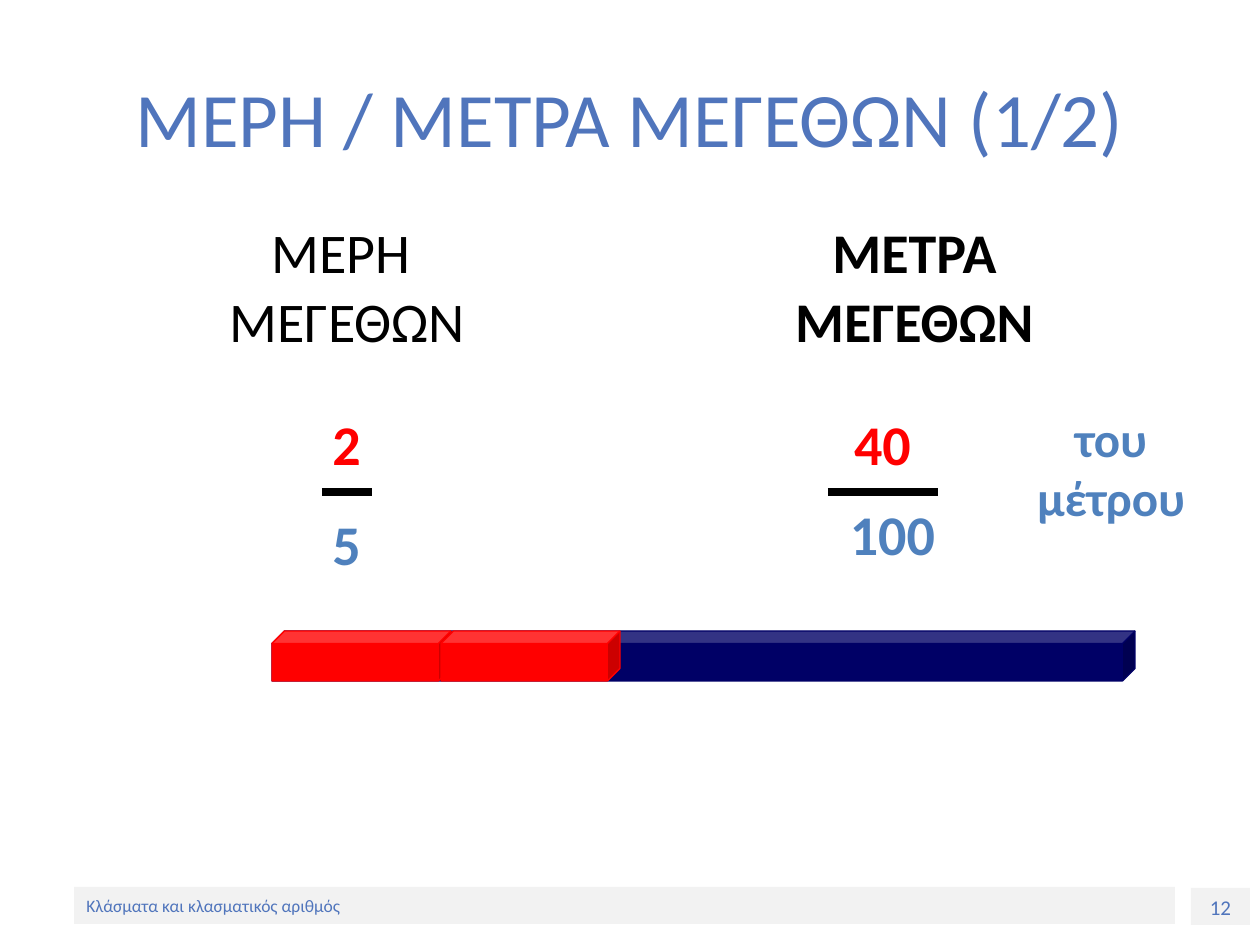
from pptx import Presentation
from pptx.dml.color import RGBColor as RGB
from pptx.enum.shapes import MSO_CONNECTOR as Conn, MSO_SHAPE as Kind
from pptx.enum.text import MSO_ANCHOR as Anchor, PP_ALIGN as Align
from pptx.oxml.ns import qn
from pptx.util import Pt
from lxml.etree import SubElement

SCALE = 914400 / 126
HUES = {"title": "5075BC", "blue": "4F81BD", "red": "FF0000",
        "navy": "000066", "black": "000000", "gray": "F2F2F2"}


def px(*nums):
    """Turn pixel lengths into EMU."""
    return [round(n * SCALE) for n in nums]


def tint(name):
    return RGB.from_string(HUES[name])


def write(frame, lines, size, hue, bold=False, align=Align.CENTER,
          anchor=Anchor.TOP):
    frame.word_wrap = True
    frame.vertical_anchor = anchor
    form = {"name": "Calibri", "size": Pt(size), "bold": bold}
    for i, line in enumerate(lines):
        para = frame.paragraphs[0] if i == 0 else frame.add_paragraph()
        para.alignment = align
        run = para.add_run()
        run.text = line
        for key, val in form.items():
            setattr(run.font, key, val)
        run.font.color.rgb = tint(hue)


def label(slide, box, text, size, hue, **form):
    shape = slide.shapes.add_textbox(*px(*box))
    write(shape.text_frame, [text], size, hue, **form)


def block(slide, kind, box, hue, edge=None):
    shape = slide.shapes.add_shape(kind, *px(*box))
    shape.shadow.inherit = False
    shape.fill.solid()
    shape.fill.fore_color.rgb = tint(hue)
    if edge:
        shape.line.color.rgb = tint(hue)
        shape.line.width = Pt(edge)
    else:
        shape.line.fill.background()
    return shape


def strip(slide, box, text, size, align, anchor):
    """Footer field on a gray ground."""
    shape = block(slide, Kind.RECTANGLE, box, "gray")
    write(shape.text_frame, [text], size, "title", align=align, anchor=anchor)


def bar(slide, left, right, y):
    """Fraction bar."""
    line = slide.shapes.add_connector(Conn.STRAIGHT, *px(left, y, right, y))
    line.line.color.rgb = tint("black")
    line.line.width = Pt(4.5)
    SubElement(line._element.spPr, qn("a:effectLst"))


def heads(slide, box, cells):
    table = slide.shapes.add_table(1, len(cells), *px(*box)).table
    table.first_row = table.horz_banding = False
    for cell, (lines, bold) in zip(table.rows[0].cells, cells):
        cell.fill.background()
        write(cell.text_frame, lines, 32, "black", bold=bold)


def rod(slide, left, top, parts):
    """Long rod with its first parts marked in red."""
    block(slide, Kind.CUBE, (left, top, 863, 50), "navy", 0.75)
    for i in range(parts):
        block(slide, Kind.CUBE, (left + 169 * i, top, 179, 50), "red", 0.75)


def main():
    deck = Presentation()
    deck.slide_width, deck.slide_height = px(1260, 945)
    slide = deck.slides.add_slide(deck.slide_layouts[6])

    strip(slide, (1191, 888, 59, 37), "12", 12, Align.CENTER, Anchor.TOP)
    strip(slide, (74, 887, 1101, 37), "Κλάσματα και κλασματικός αριθμός", 10,
          Align.LEFT, Anchor.MIDDLE)
    label(slide, (63, 38, 1134, 158), "ΜΕΡΗ / ΜΕΤΡΑ ΜΕΓΕΘΩΝ (1/2)", 44,
          "title", anchor=Anchor.MIDDLE)
    heads(slide, (64, 214, 1134, 185),
          [(["ΜΕΡΗ ", "ΜΕΓΕΘΩΝ"], False), (["ΜΕΤΡΑ", "ΜΕΓΕΘΩΝ"], True)])

    for box, text, size, hue in [
            ((302, 403, 89, 80), "2", 32, "red"),
            ((302, 503, 89, 80), "5", 32, "blue"),
            ((838, 403, 89, 80), "40", 32, "red"),
            ((828, 493, 129, 80), "100", 32, "blue"),
            ((1007, 402, 208, 130), "του μέτρου", 28, "blue")]:
        label(slide, box, text, size, hue, bold=True)
    bar(slide, 322, 372, 492)
    bar(slide, 828, 938, 492)
    rod(slide, 272, 631, 2)

    deck.save("out.pptx")


if __name__ == "__main__":
    main()
